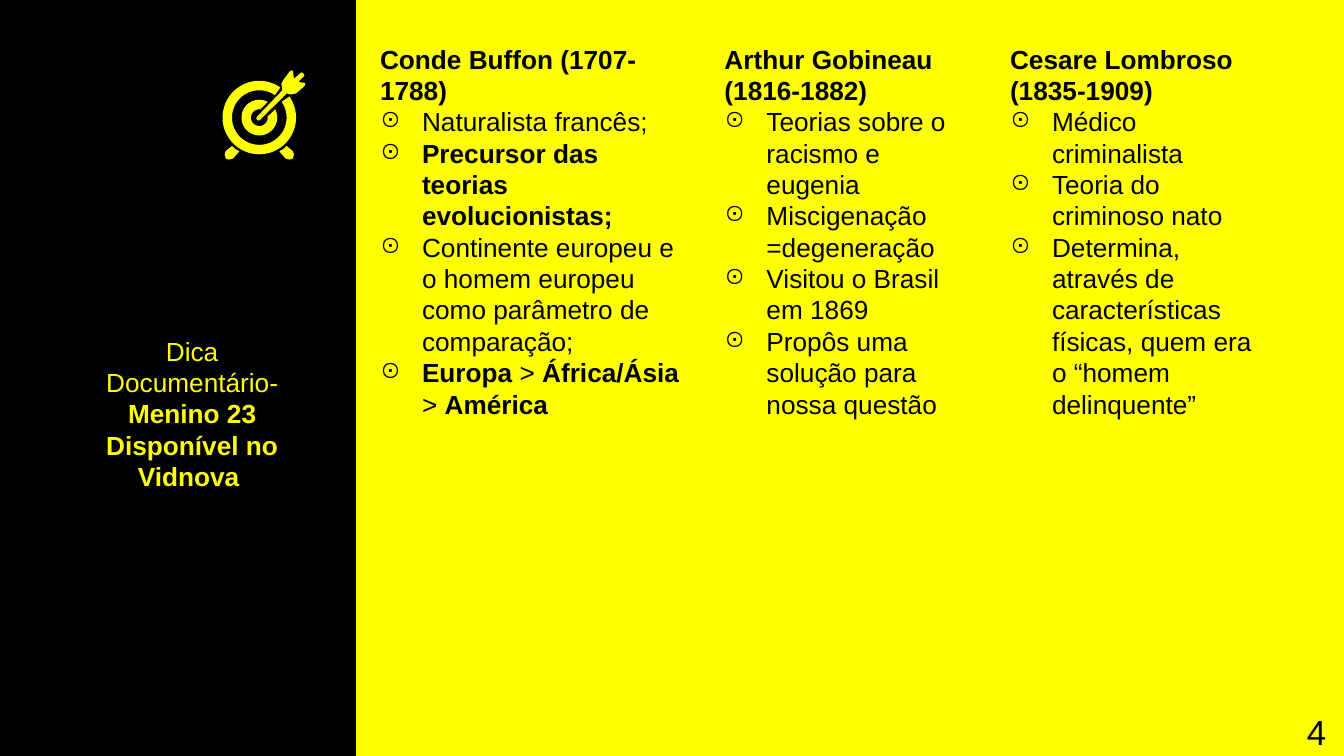
from math import cos, sin, radians
from lxml import etree
from pptx import Presentation, util as u
from pptx.dml.color import RGBColor
from pptx.enum import shapes, text
from pptx.oxml import ns

PX = 9525
BLACK = RGBColor(0, 0, 0)
YELLOW = RGBColor(255, 255, 0)

BUFFON = [
    "*Conde Buffon (1707-1788)*",
    "Naturalista francês;",
    "*Precursor das teorias evolucionistas;*",
    "Continente europeu e o homem europeu como parâmetro de comparação;",
    "*Europa *> *África/Ásia *> *América*",
]
GOBINEAU = [
    "*Arthur Gobineau (1816-1882)*",
    "Teorias sobre o racismo e eugenia",
    "Miscigenação =degeneração",
    "Visitou o Brasil em 1869",
    "Propôs uma solução para nossa questão",
]
LOMBROSO = [
    "*Cesare Lombroso (1835-1909)*",
    "Médico criminalista",
    "Teoria do criminoso nato",
    "Determina, através de características físicas, quem era o “homem delinquente”",
]
FOOT = [(9, 72), (3, 77), (2, 80), (3, 84), (6, 85), (10, 84), (16, 77), (12, 75)]
DART = [
    (66, 0), (64, 1), (58, 9), (56, 13), (57, 19), (33, 44), (32, 46),
    (34, 48), (36, 47), (61, 22), (65, 23), (70, 22), (78, 15), (79, 13),
    (78, 12), (72, 11), (78, 5), (77, 3), (75, 2), (68, 8), (67, 1),
]


def paint(shape, color):
    shape.shadow.inherit = False
    shape.fill.solid()
    shape.fill.fore_color.rgb = color
    shape.line.fill.background()


def bullet(para, color):
    props = para._p.get_or_add_pPr()
    props.set("marL", str(40 * PX))
    props.set("indent", str(-40 * PX))
    tint = etree.SubElement(props, ns.qn("a:buClr"))
    etree.SubElement(tint, ns.qn("a:srgbClr"), val=str(color))
    etree.SubElement(props, ns.qn("a:buChar"), char="⊙")


def write(slide, box, paras, size=18.7, color=BLACK, align=text.PP_ALIGN.LEFT,
          before=0, dots=False):
    frame = slide.shapes.add_textbox(*(n * PX for n in box)).text_frame
    frame.word_wrap = True
    frame.margin_left = frame.margin_right = 12 * PX
    frame.margin_top = frame.margin_bottom = 12 * PX
    for row, line in enumerate(paras):
        para = frame.add_paragraph() if row else frame.paragraphs[0]
        para.alignment = align
        para.line_spacing = u.Pt(round(size * 1.2, 1))
        para.space_before = u.Pt(0 if row else before)
        if dots and row:
            bullet(para, color)
        for part, chunk in enumerate(line.split("*")):
            for turn, words in enumerate(chunk.split("\n")):
                if turn:
                    para.add_line_break()
                if not words:
                    continue
                run = para.add_run()
                run.text = words
                run.font.name = "Arial"
                run.font.size = u.Pt(size)
                run.font.bold = part % 2 == 1
                run.font.color.rgb = color


def arc(radius, start, end):
    angles = [radians(start + (end - start) * i / 60) for i in range(61)]
    return [(35 + radius * cos(a), 45 + radius * sin(a)) for a in angles]


def ring(outer, inner, wide, slim):
    return arc(outer, wide - 45, 315 - wide) + arc(inner, 315 - slim, slim - 45)


def target(slide, left, top):
    group = slide.shapes.add_group_shape()
    mirror = [(70 - x, y) for x, y in FOOT]
    for outline in (ring(35, 26, 10, 10), ring(17, 8, 17, 38), FOOT, mirror, DART):
        points = [((left + x) * PX, (top + y) * PX) for x, y in outline]
        form = group.shapes.build_freeform(*points[0], scale=1.0)
        form.add_line_segments(points[1:], close=True)
        paint(form.convert_to_shape(), YELLOW)


def panel(slide, left, top, width, height):
    side = slide.shapes.add_shape(
        shapes.MSO_SHAPE.RECTANGLE, left * PX, top * PX, width * PX, height * PX)
    paint(side, BLACK)
    write(slide, (left + 64, top + 307, 238, 275),
          ["Dica\nDocumentário- *Menino 23\nDisponível no Vidnova *"],
          color=YELLOW, align=text.PP_ALIGN.CENTER)
    target(slide, left + 212, top + 67)


def columns(slide, left, top, height):
    for width, lines in ((314, BUFFON), (258, GOBINEAU), (258, LOMBROSO)):
        write(slide, (left, top, width, height), lines, before=8, dots=True)
        left += width + 14


def main():
    deck = Presentation()
    deck.slide_width, deck.slide_height = 1280 * PX, 720 * PX
    slide = deck.slides.add_slide(deck.slide_layouts[6])
    slide.background.fill.solid()
    slide.background.fill.fore_color.rgb = YELLOW
    panel(slide, 0, 0, 339, 720)
    columns(slide, 350, 29, 660)
    write(slide, (1198, 665, 77, 55), ["4"], size=24.9, align=text.PP_ALIGN.RIGHT)
    deck.save("out.pptx")


if __name__ == "__main__":
    main()
